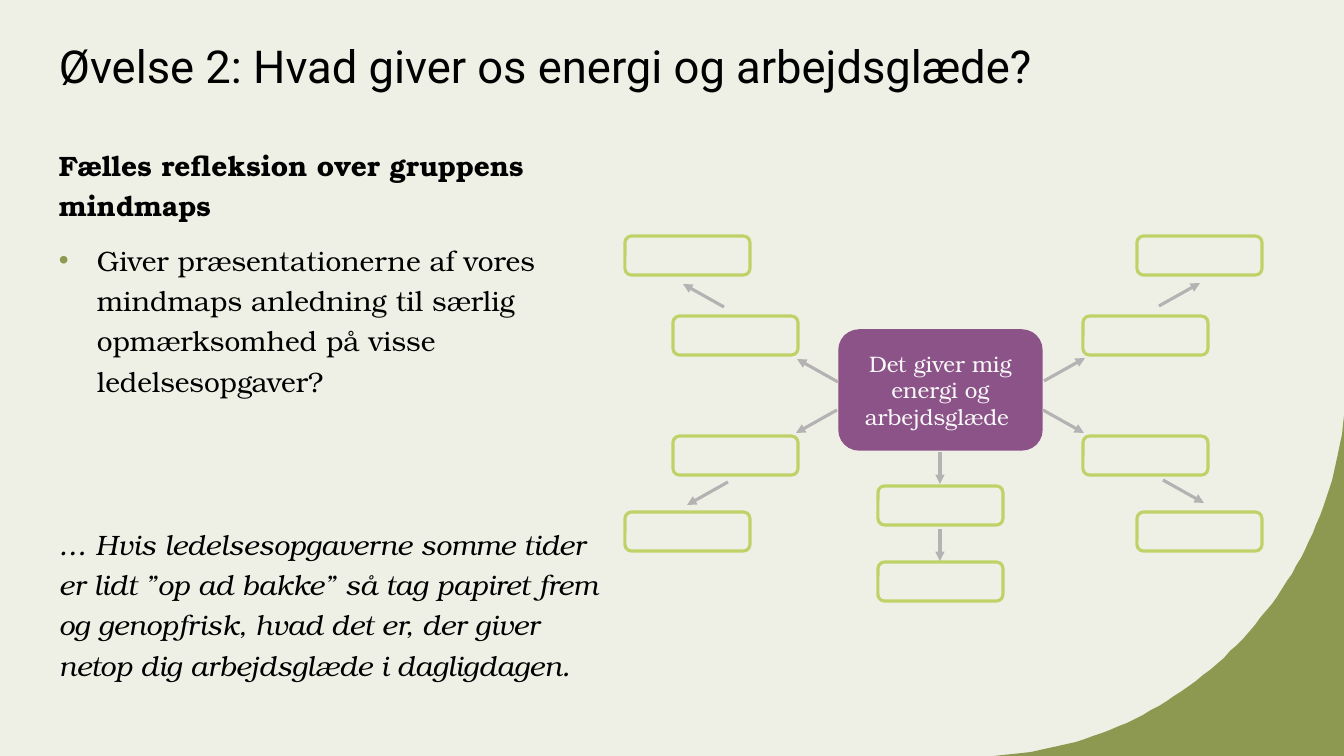
from itertools import product

from lxml import etree
from pptx import Presentation
from pptx import util as u
from pptx.dml.color import RGBColor
from pptx.enum import shapes, text
from pptx.oxml.ns import qn

PX = 914400 / 100.8  # EMU per px
SERIF = "TeX Gyre Bonum"
PAPER, OLIVE, PURPLE, LIME, GREY = "EEF0E5", "8D9950", "8C5389", "BFD268", "B4B2B2"
rgb = RGBColor.from_string

prs = Presentation()
prs.slide_width, prs.slide_height = round(1344 * PX), round(756 * PX)
s = prs.slides.add_slide(prs.slide_layouts[6])
s.background.fill.solid()
s.background.fill.fore_color.rgb = rgb(PAPER)


def emu(*lengths):
    return [round(n * PX) for n in lengths]


def write(p, words, size=20, font=SERIF, color="000000", bold=False, italic=False,
          align=None, spacing=None, before=0, bullet=None):
    if bullet:
        pPr = p._p.get_or_add_pPr()
        indent, = emu(38)
        pPr.set("marL", str(indent))
        pPr.set("indent", str(-indent))
        clr = etree.SubElement(pPr, qn("a:buClr"))
        etree.SubElement(clr, qn("a:srgbClr"), val=bullet)
        etree.SubElement(pPr, qn("a:buFont"), typeface="Arial")
        etree.SubElement(pPr, qn("a:buChar"), char="•")
    p.alignment, p.line_spacing, p.space_before = align, spacing, u.Pt(before)
    r = p.add_run()
    r.text = words
    f = r.font
    f.name, f.size, f.bold, f.italic = font, u.Pt(size), bold, italic
    f.color.rgb = rgb(color)


# Green corner: the area outside a Bézier curve
curve = [(975, 756), (1166, 756), (1324, 607), (1344, 416)]
steps = 60
edge = []
for i in range(steps + 1):
    t = i / steps
    weights = ((1 - t) ** 3, 3 * t * (1 - t) ** 2, 3 * t * t * (1 - t), t ** 3)
    edge.append([sum(w * pt[axis] for w, pt in zip(weights, curve)) for axis in (0, 1)])
fb = s.shapes.build_freeform(*edge[0], scale=PX)
fb.add_line_segments(edge[1:] + [(1344, 756)], close=True)
corner = fb.convert_to_shape()
corner.shadow.inherit = False
corner.fill.solid()
corner.fill.fore_color.rgb = rgb(OLIVE)
corner.line.fill.background()

# Title and body text
title = s.shapes.add_textbox(*emu(49, 8, 1130, 115)).text_frame
title.word_wrap = True
title.vertical_anchor = text.MSO_ANCHOR.MIDDLE
write(title.paragraphs[0], "Øvelse 2: Hvad giver os energi og arbejdsglæde?", size=32.4, font="Roboto")

body = s.shapes.add_textbox(*emu(49, 137, 574, 543)).text_frame
body.word_wrap = True
write(body.paragraphs[0], "Fælles refleksion over gruppens mindmaps", bold=True, spacing=1.2)
write(body.add_paragraph(),
      "Giver præsentationerne af vores mindmaps anledning til særlig "
      "opmærksomhed på visse ledelsesopgaver?",
      spacing=1.2, before=10, bullet=OLIVE)
write(body.add_paragraph(),
      "… Hvis ledelsesopgaverne somme tider er lidt ”op ad bakke” så tag papiret frem "
      "og genopfrisk, hvad det er, der giver netop dig arbejdsglæde i dagligdagen.",
      italic=True, spacing=1.2, before=87.6)

# Mind map: centre, then inner and outer branches
inner = list(product((673, 1083), (316, 436)))
outer = list(product((625, 1137), (236, 512)))
below = [(878, 486), (878, 562)]
nodes = [(839, 330, 203, 120, PURPLE, PURPLE, 1)]
nodes += [(x, y, 125, 39, PAPER, LIME, 2.25) for x, y in inner + outer + below]
for x, y, w, h, fill, line, weight in nodes:
    sp = s.shapes.add_shape(shapes.MSO_SHAPE.ROUNDED_RECTANGLE, *emu(x, y, w, h))
    sp.shadow.inherit = False
    sp.fill.solid()
    sp.fill.fore_color.rgb = rgb(fill)
    sp.line.color.rgb = rgb(line)
    sp.line.width = u.Pt(weight)
    if fill == PURPLE:
        tf = sp.text_frame
        tf.word_wrap = True
        tf.vertical_anchor = text.MSO_ANCHOR.MIDDLE
        write(tf.paragraphs[0], "Det giver mig energi og arbejdsglæde ", size=16,
              color="F8F8F8", align=text.PP_ALIGN.CENTER)

# Arrows grouped by direction: (dx, dy), start points
arrows = [
    ((-41, -23), [(838, 382), (724, 307)]),
    ((-41, 23), [(837, 410), (728, 482)]),
    ((41, -23), [(1044, 381), (1159, 306)]),
    ((41, 23), [(1043, 410), (1163, 480)]),
    ((0, 32), [(940, 452), (940, 529)]),
]
for (dx, dy), starts in arrows:
    for x, y in starts:
        cx = s.shapes.add_connector(shapes.MSO_CONNECTOR.STRAIGHT, *emu(x, y, x + dx, y + dy))
        cx.line.color.rgb = rgb(GREY)
        cx.line.width = u.Pt(2.25)
        etree.SubElement(cx.line._get_or_add_ln(), qn("a:tailEnd"), type="triangle")
        etree.SubElement(cx._element.spPr, qn("a:effectLst"))

prs.save("out.pptx")
